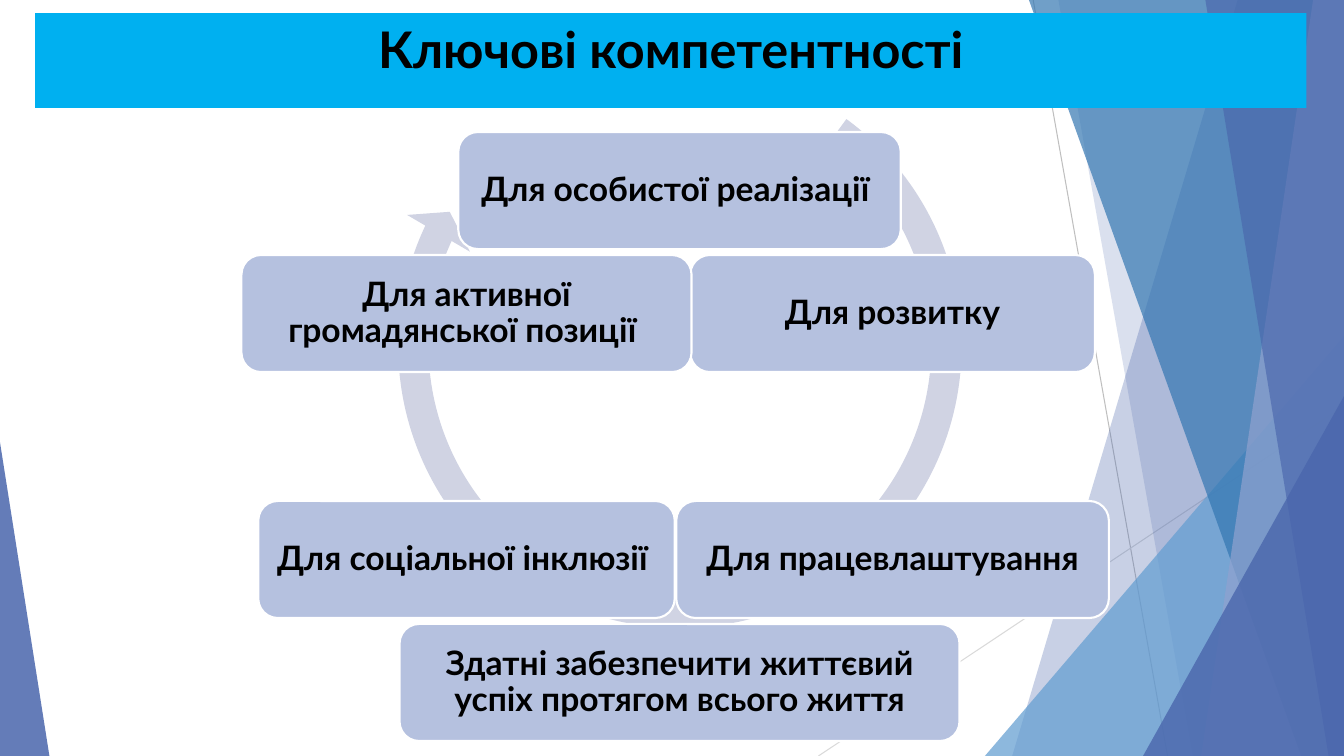
import math
from dataclasses import dataclass

import lxml.etree
import pptx
import pptx.dml.color
import pptx.enum.shapes
import pptx.enum.text
import pptx.oxml.ns
import pptx.util

Pt = pptx.util.Pt
Shape = pptx.enum.shapes.MSO_SHAPE
Anchor = pptx.enum.text.MSO_ANCHOR
qn = pptx.oxml.ns.qn

WIDTH, HEIGHT = 960, 540


@dataclass(frozen=True)
class Theme:
    font: str = "Lato"
    title_size: int = 36
    node_size: int = 24
    text: str = "000000"
    banner: str = "00B0F0"
    ring: str = "D0D3E3"
    node: str = "B5C1DF"
    node_line: str = "FFFFFF"
    indigo: str = "4A66AC"
    sky: str = "629DD1"
    blue: str = "3477B2"
    lavender: str = "90A2CF"
    line_dark: str = "BFBFBF"
    line_light: str = "D9D9D9"


def rgb(color):
    return pptx.dml.color.RGBColor.from_string(color)


class SlideBuilder:
    def __init__(self, slide, theme):
        self.shapes = slide.shapes
        self.theme = theme

    def paint(self, shape, color, opacity=100, line=None):
        """Set fill, opacity in percent and outline, without a shadow."""
        shape.shadow.inherit = False
        shape.fill.solid()
        shape.fill.fore_color.rgb = rgb(color)
        if opacity < 100:
            fill_color = shape._element.spPr.find(qn("a:solidFill"))[0]
            alpha = lxml.etree.SubElement(fill_color, qn("a:alpha"))
            alpha.set("val", str(opacity * 1000))
        if line:
            shape.line.color.rgb = rgb(line)
            shape.line.width = Pt(1.5)
        else:
            shape.line.fill.background()

    def shape(self, kind, left, top, width, height, color, opacity=100,
              line=None, adjustments=()):
        shape = self.shapes.add_shape(
            kind, Pt(left), Pt(top), Pt(width), Pt(height))
        for index, value in enumerate(adjustments):
            shape.adjustments[index] = value
        self.paint(shape, color, opacity, line)
        return shape

    def line(self, start, end, color):
        line = self.shapes.add_connector(
            pptx.enum.shapes.MSO_CONNECTOR.STRAIGHT,
            Pt(start[0]), Pt(start[1]), Pt(end[0]), Pt(end[1]))
        line.line.color.rgb = rgb(color)
        line.line.width = Pt(0.75)
        lxml.etree.SubElement(line._element.spPr, qn("a:effectLst"))

    def facet(self, top_left, bottom_left, color, opacity):
        """Fill from a slanted left edge to the right side of the slide."""
        builder = self.shapes.build_freeform(Pt(top_left), 0)
        builder.add_line_segments([
            (Pt(WIDTH), 0), (Pt(WIDTH), Pt(HEIGHT)),
            (Pt(bottom_left), Pt(HEIGHT))])
        self.paint(builder.convert_to_shape(), color, opacity)

    def corner(self, left, top, width, color, opacity, apex):
        """Stand a right triangle on the bottom edge; apex 0 left, 1 right."""
        self.shape(Shape.ISOSCELES_TRIANGLE, left, top, width, HEIGHT - top,
                   color, opacity, adjustments=[apex])

    def label(self, box, text, size, anchor, inset, spacing=1.0):
        frame = box.text_frame
        frame.word_wrap = True
        frame.vertical_anchor = anchor
        frame.margin_left = frame.margin_right = Pt(inset)
        frame.margin_top = frame.margin_bottom = Pt(3.6)
        para = frame.paragraphs[0]
        para.alignment = pptx.enum.text.PP_ALIGN.CENTER
        para.line_spacing = spacing
        span = para.add_run()
        span.text = text
        span.font.name = self.theme.font
        span.font.size = Pt(size)
        span.font.bold = True
        span.font.color.rgb = rgb(self.theme.text)

    def banner(self, text):
        box = self.shape(Shape.RECTANGLE, 25.2, 9.4, 908, 67.7,
                         self.theme.banner)
        self.label(box, text, self.theme.title_size, Anchor.TOP, 7.2)

    def node(self, center_x, center_y, width, text):
        height = 83.6
        box = self.shape(Shape.ROUNDED_RECTANGLE, center_x - width / 2,
                         center_y - height / 2, width, height,
                         self.theme.node, line=self.theme.node_line)
        self.label(box, text, self.theme.node_size, Anchor.MIDDLE, 3, 0.9)


def draw_backdrop(page, theme):
    page.line((738, 0), (834, HEIGHT), theme.line_dark)
    page.line((WIDTH, 290), (584.6, HEIGHT), theme.line_light)
    page.facet(884, 723, theme.indigo, 30)
    page.facet(756, 852, theme.indigo, 20)
    page.corner(703.5, 240, 256.5, theme.sky, 72, 1)
    page.facet(735, 929.5, theme.blue, 70)
    page.facet(938, 858, theme.lavender, 70)
    page.facet(861, 949, theme.indigo, 65)
    page.corner(816.5, 283, 143.5, theme.indigo, 80, 1)
    page.corner(0, 316, 35.3, theme.indigo, 85, 0)


def draw_cycle(page, theme):
    page.shape(Shape.CIRCULAR_ARROW, 269.3, 31, 432.7, 432.7, theme.ring,
               adjustments=[0.05, 3.13, 123.05, 183.74, 0.06])
    nodes = [
        (316, "Для особистої реалізації "),
        (289, "Для розвитку"),
        (309, "Для працевлаштування"),
        (400, "Здатні забезпечити життєвий успіх протягом всього життя"),
        (297.5, "Для соціальної інклюзії "),
        (321.5, "Для активної громадянської позиції "),
    ]
    center_x, center_y, radius = 485.4, 311.8, 175.7
    for index, (width, text) in enumerate(nodes):
        angle = math.tau * index / len(nodes)
        page.node(center_x + radius * math.sin(angle),
                  center_y - radius * math.cos(angle), width, text)


def main():
    deck = pptx.Presentation()
    deck.slide_width, deck.slide_height = Pt(WIDTH), Pt(HEIGHT)
    theme = Theme()
    page = SlideBuilder(deck.slides.add_slide(deck.slide_layouts[6]), theme)
    draw_backdrop(page, theme)
    page.banner("Ключові компетентності")
    draw_cycle(page, theme)
    deck.save("out.pptx")


if __name__ == "__main__":
    main()
